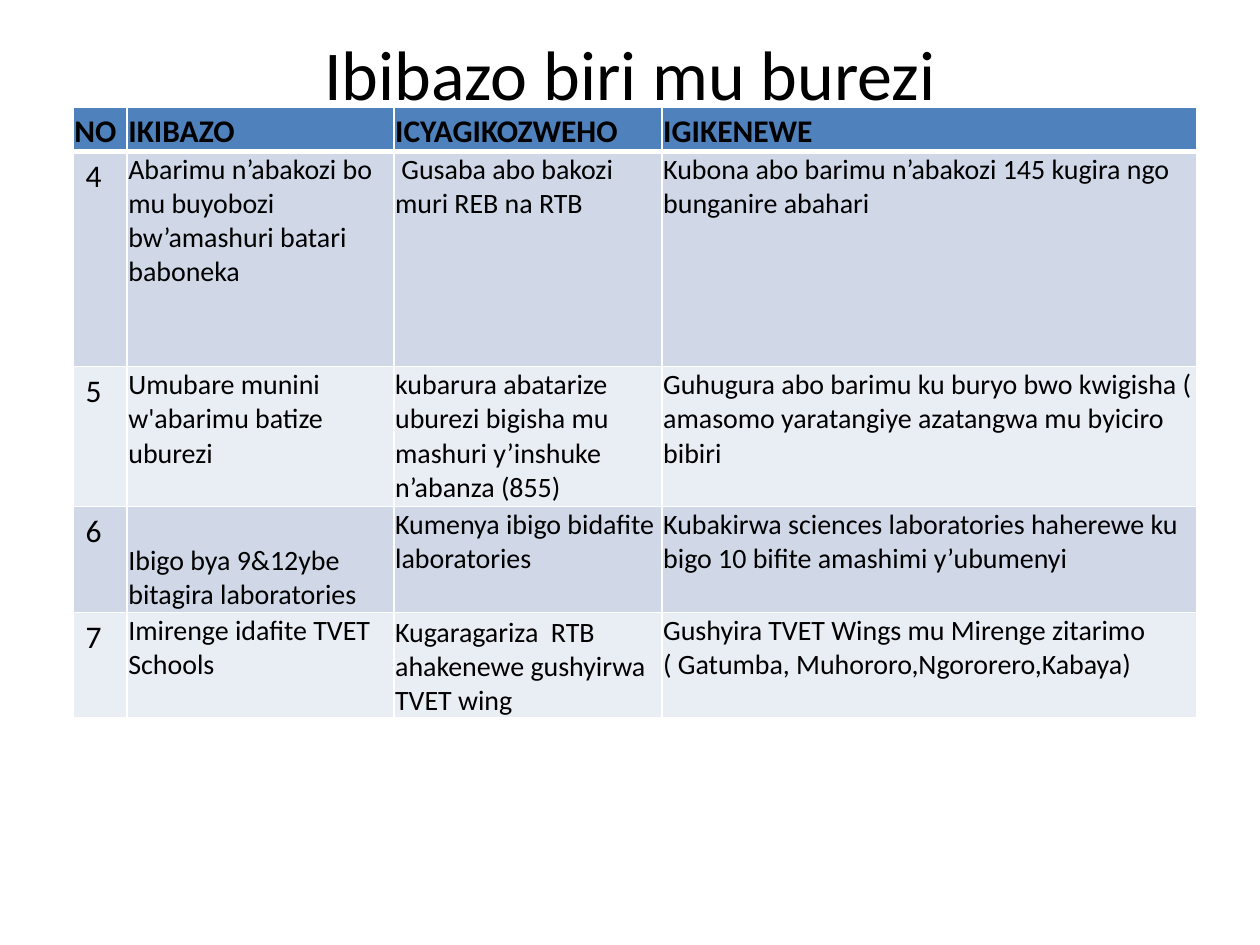
from lxml import etree
from pptx import Presentation
from pptx.dml.color import RGBColor
from pptx.enum.text import MSO_ANCHOR, PP_ALIGN
from pptx.oxml.ns import qn
from pptx.util import Inches, Pt

TOP, MIDDLE, BOTTOM = MSO_ANCHOR.TOP, MSO_ANCHOR.MIDDLE, MSO_ANCHOR.BOTTOM
CENTER = PP_ALIGN.CENTER
FONT = "Calibri"
COLORS = {
    "text": "000000",
    "border": "FFFFFF",
    "header": "4F81BD",
    "odd": "D0D8E8",
    "even": "E9EDF4",
}
COLUMN_WIDTHS = [0.43, 2.12, 2.13, 4.25]
ROW_HEIGHTS = [0.35, 1.71, 1.11, 0.84, 0.84]
TIGHT_MARGINS = {"margin_left": 0.01, "margin_right": 0.01,
                 "margin_top": 0.01, "margin_bottom": 0}
BOTTOM_CELLS = {(3, 1), (4, 2)}
ISSUES = [
    ["NO", "IKIBAZO", "ICYAGIKOZWEHO", "IGIKENEWE"],
    ["4",
     "Abarimu n’abakozi bo mu buyobozi bw’amashuri batari baboneka",
     " Gusaba abo bakozi muri REB na RTB",
     "Kubona abo barimu n’abakozi 145 kugira ngo bunganire abahari"],
    ["5",
     "Umubare munini w'abarimu batize uburezi",
     "kubarura abatarize uburezi bigisha mu mashuri y’inshuke n’abanza (855)",
     "Guhugura abo barimu ku buryo bwo kwigisha ( amasomo yaratangiye "
     "azatangwa mu byiciro bibiri"],
    ["6",
     "Ibigo bya 9&12ybe bitagira laboratories",
     "Kumenya ibigo bidafite laboratories",
     "Kubakirwa sciences laboratories haherewe ku bigo 10 bifite amashimi "
     "y’ubumenyi"],
    ["7",
     "Imirenge idafite TVET Schools",
     "Kugaragariza  RTB ahakenewe gushyirwa TVET wing",
     "Gushyira TVET Wings mu Mirenge zitarimo ( Gatumba, "
     "Muhororo,Ngororero,Kabaya)"],
]


def write_text(frame, text, size, bold=False):
    paragraph = frame.paragraphs[0]
    run = paragraph.add_run()
    run.text = text
    font_format = {"name": FONT, "size": Pt(size), "bold": bold}
    for attribute, value in font_format.items():
        setattr(run.font, attribute, value)
    run.font.color.rgb = RGBColor.from_string(COLORS["text"])
    return paragraph


def add_borders(cell, widths):
    """Draw the cell's edges; widths maps L, R, T and B to points."""
    properties = cell._tc.get_or_add_tcPr()
    for side, width in widths.items():
        line = etree.SubElement(properties, qn(f"a:ln{side}"), w=str(Pt(width)))
        fill = etree.SubElement(line, qn("a:solidFill"))
        etree.SubElement(fill, qn("a:srgbClr"), val=COLORS["border"])


def add_title(slide, left, top, width, height):
    title = slide.shapes.add_textbox(left, top, width, height).text_frame
    title.word_wrap = True
    title.vertical_anchor = MIDDLE
    write_text(title, "Ibibazo biri mu burezi", 40).alignment = CENTER


def format_cell(cell, row, column, text):
    is_header = row == 0
    is_number = column == 0 and not is_header
    if not is_number:
        for side, margin in TIGHT_MARGINS.items():
            setattr(cell, side, Inches(margin))
    at_bottom = is_header or (row, column) in BOTTOM_CELLS
    cell.vertical_anchor = BOTTOM if at_bottom else TOP
    write_text(cell.text_frame, text, 18 if is_header or is_number else 16,
               bold=is_header)
    add_borders(cell, {"L": 1, "R": 1, "T": 3 if row == 1 else 1,
                       "B": 3 if is_header else 1})
    band = "header" if is_header else "odd" if row % 2 else "even"
    cell.fill.solid()
    cell.fill.fore_color.rgb = RGBColor.from_string(COLORS[band])


def add_issue_table(slide, left, top, width, height):
    """Fill the box with the table, sharing it out by the column and row sizes."""
    table = slide.shapes.add_table(len(ISSUES), len(COLUMN_WIDTHS),
                                   left, top, width, height).table
    for column, share in zip(table.columns, COLUMN_WIDTHS):
        column.width = int(width * share / sum(COLUMN_WIDTHS))
    for row, share in zip(table.rows, ROW_HEIGHTS):
        row.height = int(height * share / sum(ROW_HEIGHTS))
    for row, issue in enumerate(ISSUES):
        for column, text in enumerate(issue):
            format_cell(table.cell(row, column), row, column, text)


def main():
    presentation = Presentation()
    presentation.slide_width = Inches(10)
    presentation.slide_height = Inches(7.5)
    slide = presentation.slides.add_slide(presentation.slide_layouts[6])
    add_title(slide, Inches(0.5), Inches(0.3), Inches(9), Inches(0.55))
    add_issue_table(slide, Inches(0.58), Inches(0.85), Inches(8.92),
                    Inches(sum(ROW_HEIGHTS)))
    presentation.save("out.pptx")


if __name__ == "__main__":
    main()
